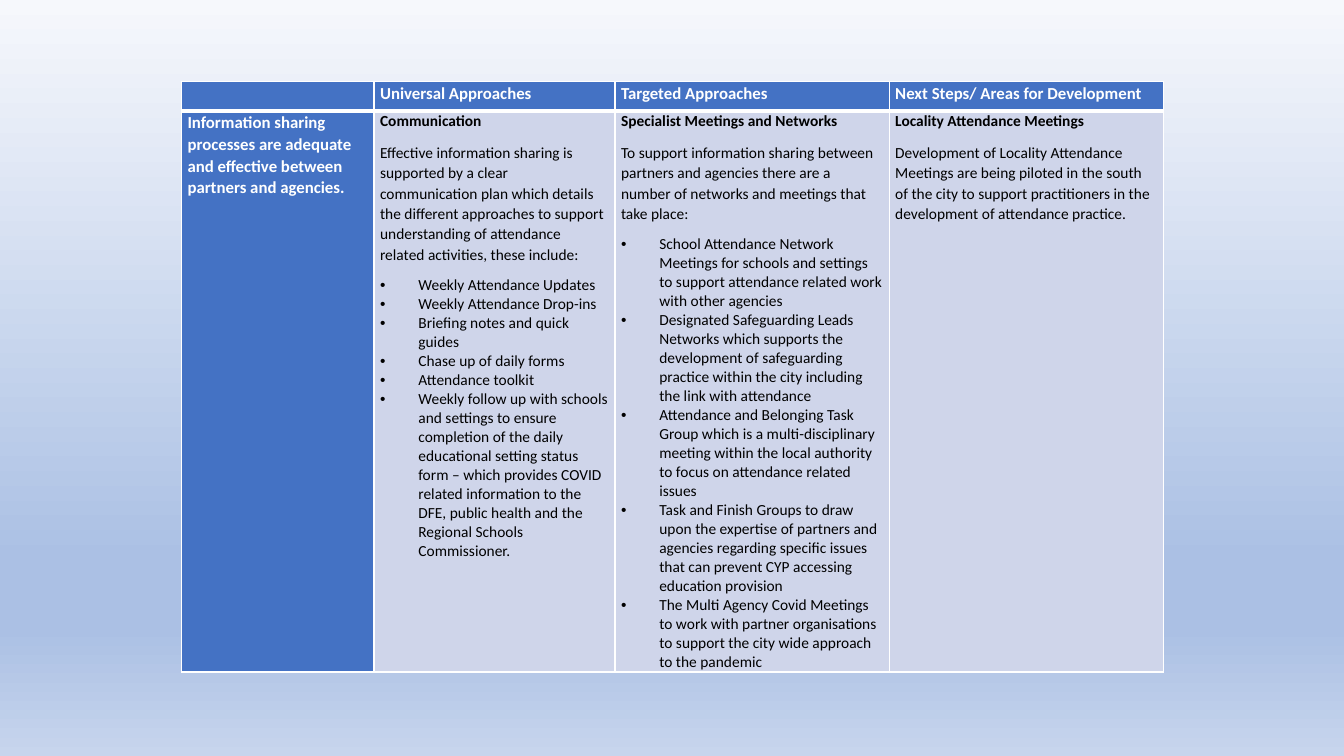
from lxml import etree
from pptx import Presentation
from pptx.dml.color import RGBColor
from pptx.oxml.ns import qn
from pptx.util import Inches, Pt

WHITE = RGBColor(0xFF, 0xFF, 0xFF)
BLACK = RGBColor(0x00, 0x00, 0x00)
BLUE = RGBColor(0x44, 0x72, 0xC4)
PALE_BLUE = RGBColor(0xCF, 0xD5, 0xEA)
BACKGROUND_STOPS = [
    (0, RGBColor(0xF6, 0xF8, 0xFC)),
    (74, RGBColor(0xAB, 0xC0, 0xE4)),
    (83, RGBColor(0xAB, 0xC0, 0xE4)),
    (100, RGBColor(0xC7, 0xD5, 0xED)),
]

FONT = "Calibri"
HEADING_SIZE, BODY_SIZE = Pt(12), Pt(11)
COLUMN_WIDTHS = [1.91, 2.39, 2.72, 2.72]
ROW_HEIGHTS = [0.29, 5.42]
THIN, THICK = Pt(1), Pt(3)

HEADINGS = ["", "Universal Approaches", "Targeted Approaches",
            "Next Steps/ Areas for Development"]
THEME = ("Information sharing processes are adequate and effective between "
         "partners and agencies.")
# Each approach: title, introduction, bullets
APPROACHES = [
    ("Communication",
     "Effective information sharing is supported by a clear communication plan "
     "which details the different approaches to support understanding of "
     "attendance related activities, these include:",
     ["Weekly Attendance Updates",
      "Weekly Attendance Drop-ins",
      "Briefing notes and quick guides",
      "Chase up of daily forms",
      "Attendance toolkit",
      "Weekly follow up with schools and settings to ensure completion of the "
      "daily educational setting status form – which provides COVID related "
      "information to the DFE, public health and the Regional Schools "
      "Commissioner."]),
    ("Specialist Meetings and Networks",
     "To support information sharing between partners and agencies there are a "
     "number of networks and meetings that take place:",
     ["School Attendance Network Meetings for schools and settings to support "
      "attendance related work with other agencies",
      "Designated Safeguarding Leads Networks which supports the development of "
      "safeguarding practice within the city including the link with attendance",
      "Attendance and Belonging Task Group which is a multi-disciplinary meeting "
      "within the local authority to focus on attendance related issues",
      "Task and Finish Groups to draw upon the expertise of partners and agencies "
      "regarding specific issues that can prevent CYP accessing education "
      "provision",
      "The Multi Agency Covid Meetings to work with partner organisations to "
      "support the city wide approach to the pandemic"]),
    ("Locality Attendance Meetings",
     "Development of Locality Attendance Meetings are being piloted in the south "
     "of the city to support practitioners in the development of attendance "
     "practice.",
     []),
]


def add_color(parent, color):
    etree.SubElement(parent, qn("a:srgbClr"), val=str(color))


def paint_background(slide):
    fill = slide.background.fill
    fill.gradient()
    fill.gradient_angle = 270
    stops = next(slide.element.iter(qn("a:gsLst")))
    for stop in list(stops):
        stops.remove(stop)
    for percent, color in BACKGROUND_STOPS:
        stop = etree.SubElement(stops, qn("a:gs"), pos=str(percent * 1000))
        add_color(stop, color)


def style_cell(cell, color, top=THIN, bottom=THIN):
    cell.margin_left = cell.margin_right = Inches(0.06)
    cell.margin_top = cell.margin_bottom = 0
    properties = cell._tc.get_or_add_tcPr()
    borders = {"lnL": THIN, "lnR": THIN, "lnT": top, "lnB": bottom}
    for side, width in borders.items():
        line = etree.SubElement(properties, qn(f"a:{side}"), w=str(width))
        add_color(etree.SubElement(line, qn("a:solidFill")), WHITE)
    cell.fill.solid()
    cell.fill.fore_color.rgb = color


def format_runs(paragraph, size, color, bold):
    for run in paragraph.runs:
        run.font.name = FONT
        run.font.size = size
        run.font.bold = bold
        run.font.color.rgb = color


def format_block(paragraph, size, color, bold):
    paragraph.line_spacing = 1.07
    paragraph.space_after = Pt(8)
    format_runs(paragraph, size, color, bold)


def format_bullet(paragraph):
    properties = paragraph._p.get_or_add_pPr()
    properties.set("marL", str(Inches(0.38)))
    properties.set("indent", str(-Inches(0.38)))
    etree.SubElement(properties, qn("a:buFont"), typeface="Arial")
    etree.SubElement(properties, qn("a:buChar"), char="•")
    format_runs(paragraph, BODY_SIZE, BLACK, False)


def fill_heading(cell, text):
    paragraph = cell.text_frame.paragraphs[0]
    if text:
        paragraph.text = text
        format_block(paragraph, HEADING_SIZE, WHITE, True)
    else:
        # An empty cell keeps the heading size so that its row stays low
        etree.SubElement(paragraph._p, qn("a:endParaRPr"),
                         sz=str(int(HEADING_SIZE.pt * 100)))


def fill_approach(cell, title, introduction, bullets):
    frame = cell.text_frame
    frame.text = "\n".join([title, introduction, *bullets])
    title_line, introduction_line, *bullet_lines = frame.paragraphs
    format_block(title_line, BODY_SIZE, BLACK, True)
    format_block(introduction_line, BODY_SIZE, BLACK, False)
    for bullet_line in bullet_lines:
        format_bullet(bullet_line)


def add_approach_table(slide):
    table = slide.shapes.add_table(
        len(ROW_HEIGHTS), len(COLUMN_WIDTHS), Inches(1.8), Inches(0.81),
        Inches(sum(COLUMN_WIDTHS)), Inches(sum(ROW_HEIGHTS))).table
    for column, width in zip(table.columns, COLUMN_WIDTHS):
        column.width = Inches(width)
    for row, height in zip(table.rows, ROW_HEIGHTS):
        row.height = Inches(height)

    # Heading row
    for index, heading in enumerate(HEADINGS):
        cell = table.cell(0, index)
        style_cell(cell, BLUE, bottom=THICK)
        fill_heading(cell, heading)

    # Theme and its approaches
    theme_cell = table.cell(1, 0)
    style_cell(theme_cell, BLUE, top=THICK)
    fill_heading(theme_cell, THEME)
    for index, approach in enumerate(APPROACHES, start=1):
        cell = table.cell(1, index)
        style_cell(cell, PALE_BLUE, top=THICK)
        fill_approach(cell, *approach)


def main():
    presentation = Presentation()
    presentation.slide_width = Inches(13.33)
    presentation.slide_height = Inches(7.5)
    slide = presentation.slides.add_slide(presentation.slide_layouts[6])
    paint_background(slide)
    add_approach_table(slide)
    presentation.save("out.pptx")


if __name__ == "__main__":
    main()
